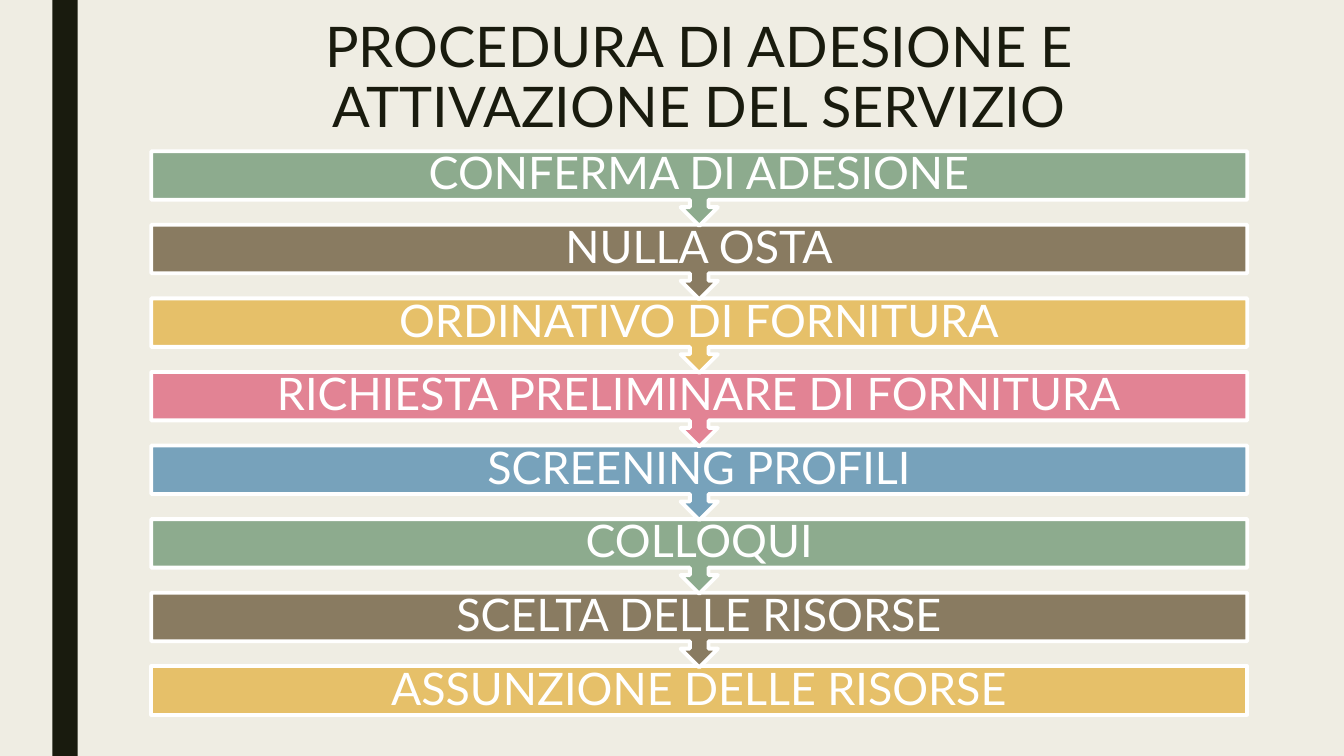
from pptx import Presentation
from pptx.dml.color import RGBColor as RGB
from pptx.enum.shapes import MSO_SHAPE as Shape
from pptx.enum.text import MSO_ANCHOR as Anchor, PP_ALIGN as Align
from pptx.util import Inches, Pt

HUES = {
    "paper": "EFEDE3", "ink": "191B0E", "white": "FFFFFF",
    "green": "8DAB8E", "brown": "897B61", "gold": "E6C069",
    "pink": "E28394", "blue": "77A2BB",
}
STEPS = [
    ("CONFERMA DI ADESIONE", "green"),
    ("NULLA OSTA", "brown"),
    ("ORDINATIVO DI FORNITURA", "gold"),
    ("RICHIESTA PRELIMINARE DI FORNITURA", "pink"),
    ("SCREENING PROFILI", "blue"),
    ("COLLOQUI", "green"),
    ("SCELTA DELLE RISORSE", "brown"),
    ("ASSUNZIONE DELLE RISORSE", "gold"),
]

deck = Presentation()
deck.slide_width, deck.slide_height = Inches(13.33), Inches(7.5)
slide = deck.slides.add_slide(deck.slide_layouts[6])
slide.background.fill.solid()
slide.background.fill.fore_color.rgb = RGB.from_string(HUES["paper"])


def add_block(kind, box, hue):
    block = slide.shapes.add_shape(kind, *map(Inches, box))
    block.shadow.inherit = False
    block.fill.solid()
    block.fill.fore_color.rgb = RGB.from_string(HUES[hue])
    return block


def add_label(text, box, size, hue, space, anchor, inset):
    frame = slide.shapes.add_textbox(*map(Inches, box)).text_frame
    frame.word_wrap = True
    frame.vertical_anchor = anchor
    frame.margin_top = frame.margin_bottom = Inches(inset)
    line = frame.paragraphs[0]
    line.text = text
    line.alignment = Align.CENTER
    line.line_spacing = space
    line.font.name = "Lato"
    line.font.size = Pt(size)
    line.font.color.rgb = RGB.from_string(HUES[hue])


band = add_block(Shape.RECTANGLE, (0.52, 0, 0.25, 7.5), "ink")
band.line.fill.background()

left, wide, top, pitch = 1.5, 10.87, 1.5, 0.73
bar, call = 0.48, 0.74
add_label("PROCEDURA DI ADESIONE E ATTIVAZIONE DEL SERVIZIO",
          (left, 0.15, wide, 1.62), 40, "ink", 0.89, Anchor.TOP, 0.05)

last = len(STEPS) - 1
for row, (text, hue) in reversed(list(enumerate(STEPS))):
    y = top + row * pitch
    if row == last:
        step = add_block(Shape.RECTANGLE, (left, y, wide, bar), hue)
    else:
        step = add_block(Shape.UP_ARROW_CALLOUT, (left, y, wide, call), hue)
        step.rotation = 180
    step.line.color.rgb = RGB.from_string(HUES["white"])
    step.line.width = Pt(2.75)
    add_label(text, (left, y, wide, bar), 32, "white", 0.9, Anchor.MIDDLE, 0)

deck.save("out.pptx")
